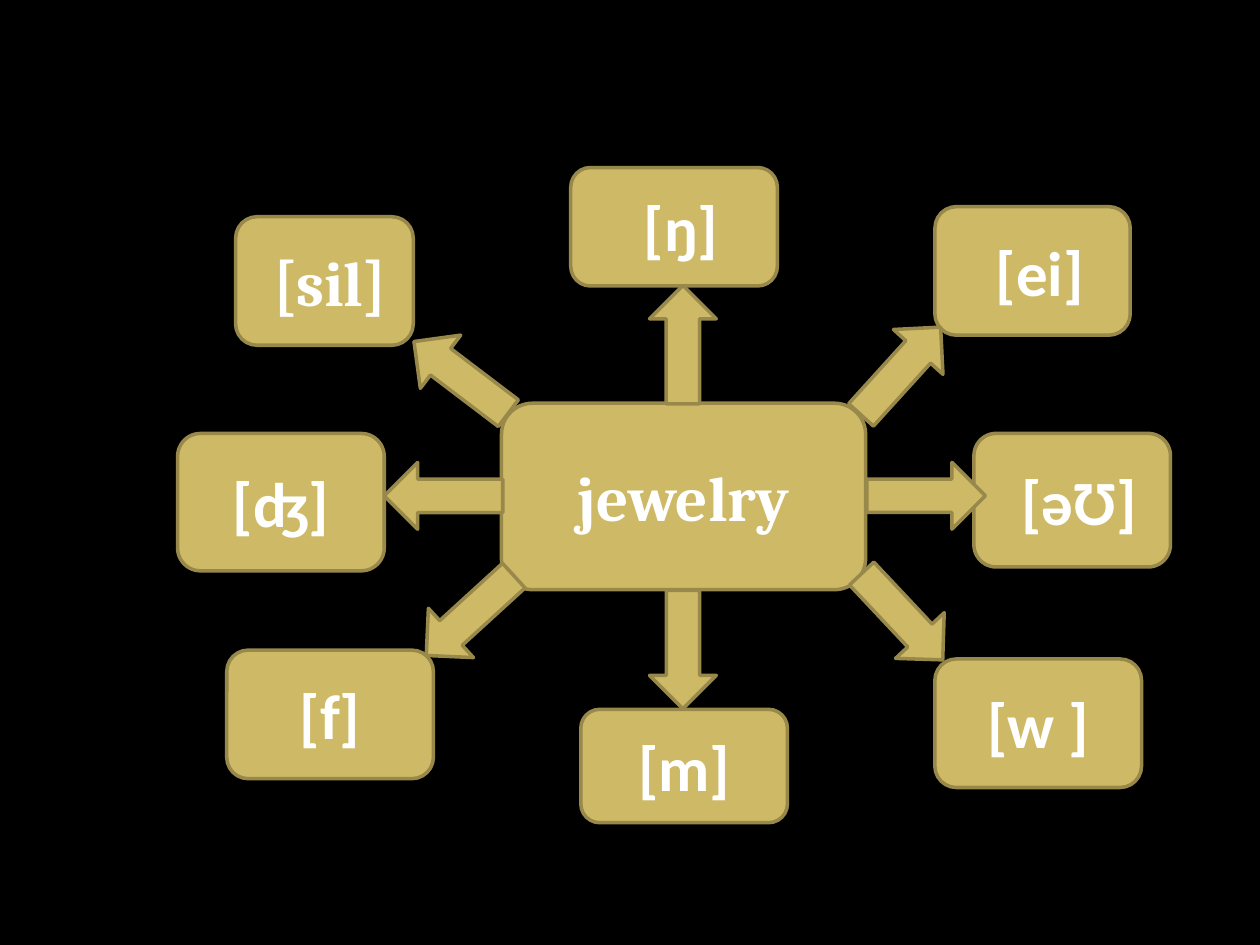
"""Build a mind map linking the word jewelry to eight sounds."""
from pptx import Presentation
from pptx.dml.color import RGBColor
from pptx.enum.shapes import MSO_SHAPE
from pptx.enum.text import MSO_ANCHOR, PP_ALIGN
from pptx.util import Inches, Pt

BOX = MSO_SHAPE.FLOWCHART_ALTERNATE_PROCESS
ARROW = MSO_SHAPE.RIGHT_ARROW
MIDDLE = MSO_ANCHOR.MIDDLE
LEFT, CENTER = PP_ALIGN.LEFT, PP_ALIGN.CENTER
BLACK = RGBColor(0x00, 0x00, 0x00)
GOLD = RGBColor(0xCE, 0xB9, 0x66)
DARK_GOLD = RGBColor(0x98, 0x89, 0x4B)
WHITE = RGBColor(0xFF, 0xFF, 0xFF)

prs = Presentation()
prs.slide_width, prs.slide_height = Inches(10), Inches(7.5)
slide = prs.slides.add_slide(prs.slide_layouts[6])
slide.background.fill.solid()
slide.background.fill.fore_color.rgb = BLACK


def add_gold_shape(kind, left, top, width, height):
    shape = slide.shapes.add_shape(
        kind, Inches(left), Inches(top), Inches(width), Inches(height))
    shape.shadow.inherit = False
    shape.fill.solid()
    shape.fill.fore_color.rgb = GOLD
    shape.line.color.rgb = DARK_GOLD
    shape.line.width = Pt(2)
    return shape


def add_word_box(word, left, top, width, height, font="Calibri", align=CENTER):
    frame = add_gold_shape(BOX, left, top, width, height).text_frame
    frame.word_wrap = True
    frame.vertical_anchor = MIDDLE
    paragraph = frame.paragraphs[0]
    paragraph.text = word
    paragraph.alignment = align
    run_font = paragraph.runs[0].font
    run_font.name = font
    run_font.size = Pt(36)
    run_font.bold = True
    run_font.color.rgb = WHITE
    return frame


syllable = add_word_box("[sil]", 1.87, 1.72, 1.41, 1.02, "Cambria", LEFT)
syllable.margin_left = Inches(0.25)
syllable.paragraphs[0].space_before = Pt(7)

sounds = [
    (" [ŋ]", 4.53, 1.33, 1.64, 0.94),
    (" [ei]", 7.42, 1.64, 1.55, 1.02),
    (" [ǝƱ]", 7.73, 3.44, 1.56, 1.06),
    ("[w ]", 7.42, 5.23, 1.64, 1.02),
    ("[m]", 4.61, 5.63, 1.64, 0.9),
    ("[f]", 1.8, 5.16, 1.64, 1.02),
    ("[ʤ]", 1.41, 3.44, 1.64, 1.09),
]
for sound in sounds:
    add_word_box(*sound)

add_word_box("jewelry", 3.98, 3.2, 2.89, 1.48, "Cambria")

arrows = [
    (4.95, 2.47, 270),
    (6.68, 2.68, 312.2),
    (6.88, 3.67, 0),
    (3.19, 2.73, 217.2),
    (3.05, 3.67, 180),
    (3.26, 4.62, 137.6),
    (4.95, 4.89, 90),
    (6.69, 4.63, 46.8),
]
for left, top, angle in arrows:
    add_gold_shape(ARROW, left, top, 0.94, 0.53).rotation = angle

prs.save("out.pptx")
